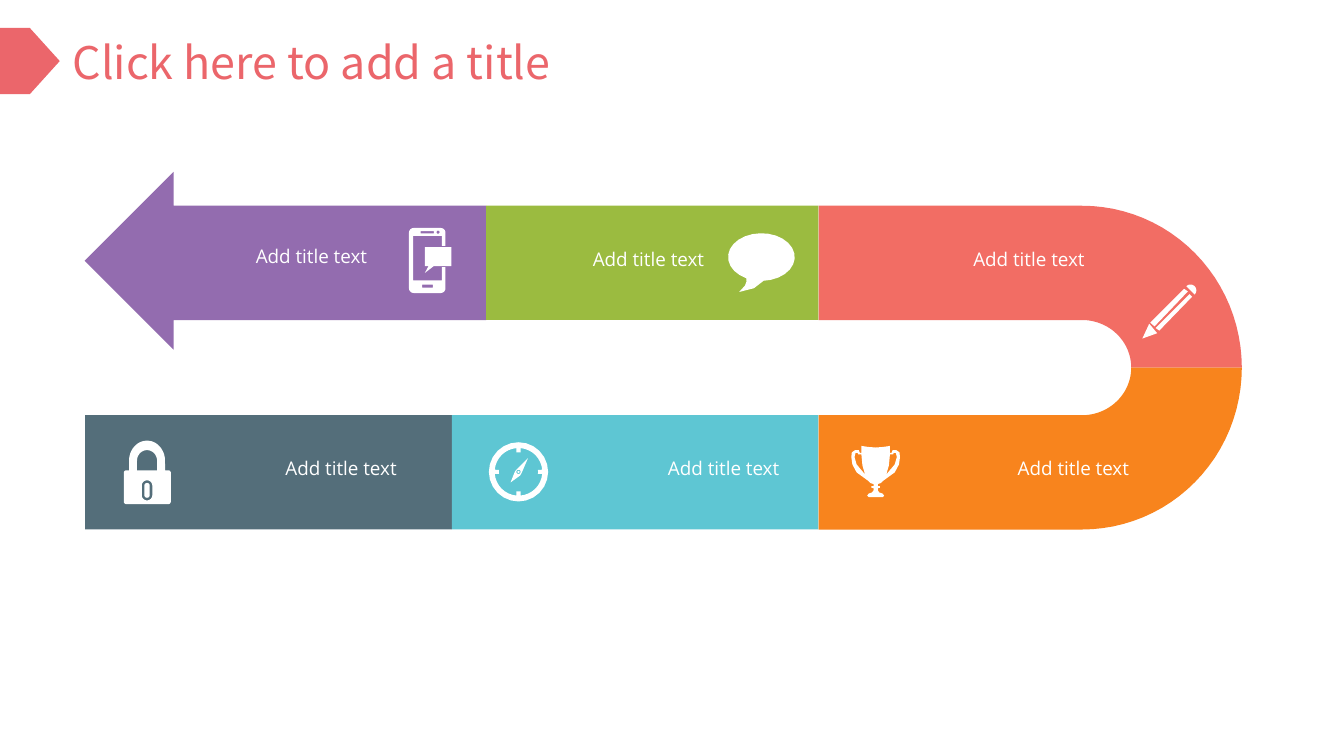
from math import cos, radians, sin

from pptx import Presentation
from pptx import util as u
from pptx.dml.color import RGBColor
from pptx.enum import shapes, text

COLORS = {"title": "EB666B", "coral": "F26D64", "purple": "936CAF", "green": "9BBB40",
          "slate": "546E7A", "teal": "5EC6D3", "orange": "F8841D", "white": "FFFFFF"}

# Content: text, left, top, width, height in cm
TITLE = ("Click here to add a title", 1.12, 0.53, 9.98, 1.27)
LABEL_SIZE = (0.69, "Add title text")
LABELS = [  # left, top, width
    (3.23, 4.5, 3.96), (9.65, 4.55, 3.91), (16.15, 4.55, 4.6),
    (3.51, 8.51, 4.24), (10.74, 8.51, 4.24), (17.35, 8.51, 4.24),
]

# Ribbon geometry in cm
LEFT, SEGMENT, BAND = 1.61, 6.93, 2.16
BEND_LEFT = LEFT + 2 * SEGMENT
BEND_X, BEND_Y = 20.45, 6.95
OUTER, INNER = (3.02, 3.06), (0.93, 0.9)
UPPER_TOP, LOWER_TOP = BEND_Y - OUTER[1], BEND_Y + INNER[1]
HEAD_X, HEAD_Y, HEAD_HALF, ARROW_RIGHT = 3.28, 4.93, 1.68, 9.19
RECTANGLES = [  # left, top, width, colour
    (ARROW_RIGHT, UPPER_TOP, BEND_LEFT - ARROW_RIGHT, "green"),
    (LEFT, LOWER_TOP, SEGMENT, "slate"),
    (LEFT + SEGMENT, LOWER_TOP, SEGMENT, "teal"),
]


# Outline helpers: each returns a list of points in cm
def arc(x, y, rx, ry, start, end, steps=24):
    angles = [radians(start + (end - start) * i / steps) for i in range(steps + 1)]
    return [(x + rx * cos(angle), y + ry * sin(angle)) for angle in angles]


def circle(x, y, radius):
    return arc(x, y, radius, radius, 0, 360)


def box(left, top, right, bottom):
    return [(left, top), (right, top), (right, bottom), (left, bottom)]


def rounded(left, top, right, bottom, radius, first=0):
    """Rounded box; first is the starting corner, clockwise from bottom right."""
    x1, x2, y1, y2 = left + radius, right - radius, top + radius, bottom - radius
    corners = [(x2, y2), (x1, y2), (x1, y1), (x2, y1)]
    points = []
    for i in range(4):
        corner = (first + i) % 4
        points += arc(*corners[corner], radius, radius, 90 * corner, 90 * corner + 90, 6)
    return points


def mirrored(x, half):
    """Join a right half, given as offsets from x, with its reflection."""
    return [(x + dx, y) for dx, y in half] + [(x - dx, y) for dx, y in reversed(half)]


def bend(side):
    """Half of the U-turn: side is -1 for the upper half, 1 for the lower."""
    return [(BEND_LEFT, BEND_Y + side * INNER[1]),
            *arc(BEND_X, BEND_Y, *INNER, side * 90, 0),
            *arc(BEND_X, BEND_Y, *OUTER, 0, side * 90),
            (BEND_LEFT, BEND_Y + side * OUTER[1])]


ARROW = [(1.6, HEAD_Y), (HEAD_X, HEAD_Y - HEAD_HALF), (HEAD_X, UPPER_TOP),
         (ARROW_RIGHT, UPPER_TOP), (ARROW_RIGHT, UPPER_TOP + BAND),
         (HEAD_X, UPPER_TOP + BAND), (HEAD_X, HEAD_Y + HEAD_HALF)]

# Icons: each is a list of parts, each part a list of contours
COMPASS_X, COMPASS_Y, HUB_RADIUS = 9.8, 8.92, 0.02
dial = [point for angle in range(0, 360, 90)
        for radius, start, end in ((0.45, 5, 85), (0.37, 84, 96))
        for point in arc(COMPASS_X, COMPASS_Y, radius, radius, angle + start, angle + end, 8)]

TROPHY_X = 16.55
cup = [(0, 8.46), (0.14, 8.45), (0.27, 8.43), (0.27, 8.56), (0.3, 8.56), (0.32, 8.51),
       (0.39, 8.51), (0.45, 8.55), (0.46, 8.64), (0.44, 8.78), (0.36, 8.93), (0.14, 9.09),
       (0.1, 9.13), (0.04, 9.15), (0.04, 9.19), (0.08, 9.19), (0.08, 9.22), (0.04, 9.23),
       (0.04, 9.27), (0.07, 9.31), (0.13, 9.33), (0.16, 9.37), (0.13, 9.4)]
handle = [(0.27, 8.59), (0.33, 8.59), (0.34, 8.56), (0.38, 8.56), (0.4, 8.64),
          (0.36, 8.78), (0.2, 8.97), (0.25, 8.8)]

ICONS = {
    "compass": [
        [circle(COMPASS_X, COMPASS_Y, 0.56), dial],
        [[(9.73, 8.92), (9.65, 9.12), (9.83, 8.99), (9.86, 8.94), (9.98, 8.66), (9.75, 8.89)],
         circle(COMPASS_X, COMPASS_Y, 0.04)],
    ],
    "speech bubble": [
        [[*arc(14.39, 4.86, 0.63, 0.45, 117, 447), (14.43, 5.31), (14.25, 5.45),
          (13.97, 5.52), (14.08, 5.4), (14.11, 5.32)]],
    ],
    "padlock": [
        [[*rounded(2.34, 8.89, 3.23, 9.53, 0.05, first=3), (2.44, 8.89),
          *arc(2.78, 8.71, 0.34, 0.38, 180, 360), (3.12, 8.89)],
         [(2.59, 8.89), *arc(2.78, 8.71, 0.19, 0.2, 180, 360), (2.97, 8.89)],
         rounded(2.68, 9.08, 2.88, 9.46, 0.1)],
        [rounded(2.73, 9.13, 2.83, 9.41, 0.05)],
    ],
    "phone": [
        [[*rounded(7.73, 4.31, 8.42, 5.54, 0.09), (8.42, 4.65), (8.35, 4.65), (8.35, 4.46),
          (7.81, 4.46), (7.81, 5.3), (8.35, 5.3), (8.35, 5.05), (8.42, 5.05)],
         box(7.95, 4.37, 8.2, 4.41), circle(8.28, 4.39, 0.03), box(7.98, 5.38, 8.18, 5.44)],
        [[(8.03, 4.67), (8.53, 4.67), (8.53, 5.03), (8.2, 5.03), (8.03, 5.16),
          (8.1, 5.03), (8.03, 5.03)]],
    ],
    "pencil": [
        [[(21.72, 6.12), (21.59, 6.4), (21.87, 6.3)]],
        [[(22.38, 5.46), (21.74, 6.1), (21.82, 6.17), (22.45, 5.51)]],
        [[(22.48, 5.56), (21.84, 6.2), (21.91, 6.25), (22.53, 5.61)]],
        [arc(22.5, 5.49, 0.11, 0.11, -135, 45)],
    ],
    "trophy": [
        [mirrored(TROPHY_X, cup)]
        + [[(TROPHY_X + side * dx, y) for dx, y in handle] for side in (1, -1)],
    ],
}


# Drawing helpers
def paint(shape, color):
    shape.shadow.inherit = False
    shape.fill.solid()
    shape.fill.fore_color.rgb = RGBColor.from_string(COLORS[color])
    shape.line.fill.background()


def add_preset(parent, kind, left, top, width, height, color):
    paint(parent.add_shape(kind, u.Cm(left), u.Cm(top), u.Cm(width), u.Cm(height)), color)


def add_outline(parent, contours, color):
    first, *others = [[(u.Cm(x), u.Cm(y)) for x, y in contour] for contour in contours]
    builder = parent.build_freeform(*first[0])
    builder.add_line_segments(first[1:], close=True)
    for contour in others:
        builder.move_to(*contour[0])
        builder.add_line_segments(contour[1:], close=True)
    paint(builder.convert_to_shape(), color)


def add_text(parent, content, left, top, width, height, inset, wrap, align, font):
    shape = parent.add_textbox(u.Cm(left), u.Cm(top), u.Cm(width), u.Cm(height))
    frame = shape.text_frame
    frame_format = {"word_wrap": wrap, "auto_size": text.MSO_AUTO_SIZE.SHAPE_TO_FIT_TEXT,
                    "vertical_anchor": text.MSO_ANCHOR.MIDDLE,
                    "margin_top": u.Cm(inset), "margin_bottom": u.Cm(inset)}
    for name, value in frame_format.items():
        setattr(frame, name, value)
    paragraph = frame.paragraphs[0]
    paragraph.alignment = align
    run = paragraph.add_run()
    run.text = content
    name, size, color = font
    for key, value in {"name": name, "size": u.Pt(size)}.items():
        setattr(run.font, key, value)
    run.font.color.rgb = RGBColor.from_string(COLORS[color])


presentation = Presentation()
presentation.slide_width, presentation.slide_height = u.Cm(25.4), u.Cm(14.29)
slide = presentation.slides.add_slide(presentation.slide_layouts[6])
canvas = slide.shapes

# Title and its marker
add_preset(canvas, shapes.MSO_SHAPE.PENTAGON, 0, 0.53, 1.13, 1.25, "title")
add_text(canvas, *TITLE, 0.02, False, text.PP_ALIGN.LEFT, ("Noto Sans CJK SC", 24, "title"))

# Ribbon
add_outline(canvas, [bend(-1)], "coral")
add_outline(canvas, [ARROW], "purple")
for left, top, width, color in RECTANGLES:
    add_preset(canvas, shapes.MSO_SHAPE.RECTANGLE, left, top, width, BAND, color)
add_outline(canvas, [bend(1)], "orange")

# Icons
for icon, parts in ICONS.items():
    parent = canvas.add_group_shape().shapes if len(parts) > 1 else canvas
    for contours in parts:
        add_outline(parent, contours, "white")
    if icon == "compass":
        add_preset(parent, shapes.MSO_SHAPE.OVAL, COMPASS_X - HUB_RADIUS,
                   COMPASS_Y - HUB_RADIUS, 2 * HUB_RADIUS, 2 * HUB_RADIUS, "white")

# Labels
label_height, label_text = LABEL_SIZE
for left, top, width in LABELS:
    add_text(canvas, label_text, left, top, width, label_height, 0.1, True,
             text.PP_ALIGN.RIGHT, ("Open Sans", 10.1, "white"))

presentation.save("out.pptx")
